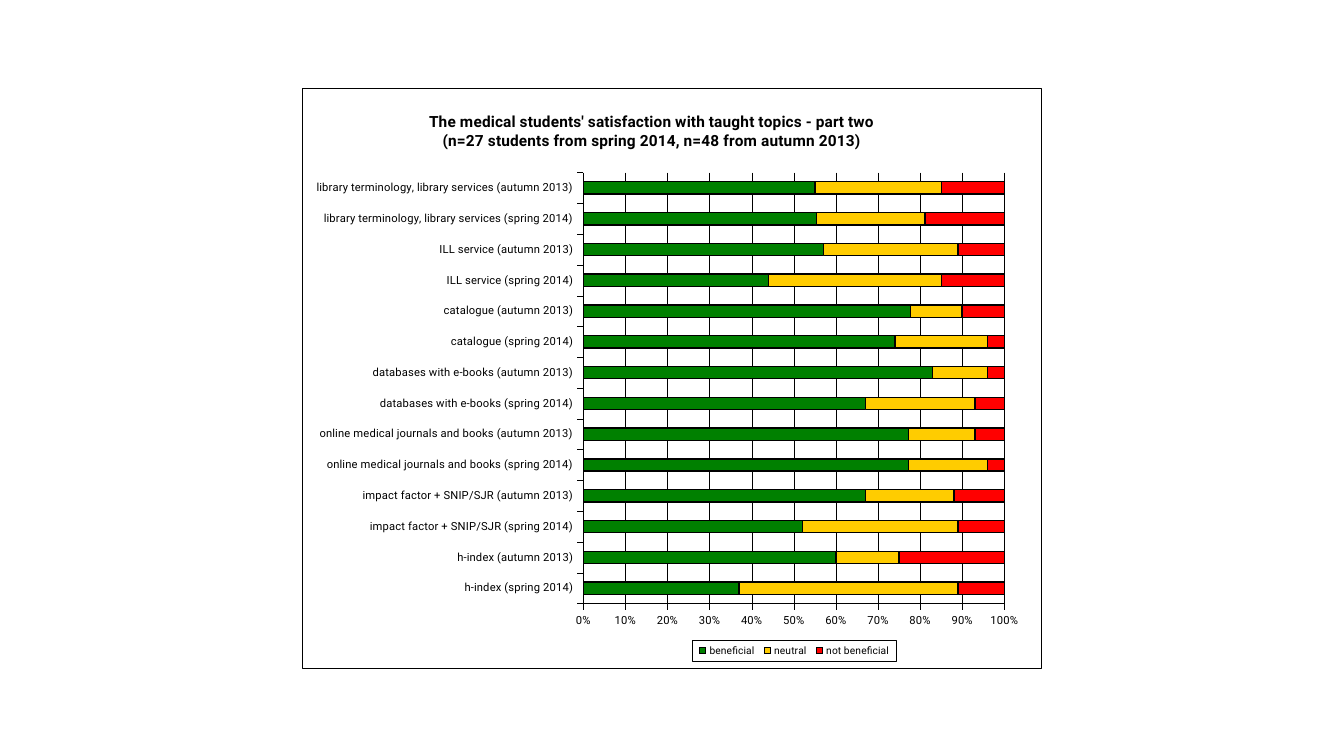
import lxml.etree
import pptx
import pptx.chart.data
import pptx.dml.color
import pptx.enum.chart
import pptx.oxml
import pptx.oxml.ns
import pptx.util

BLACK = pptx.dml.color.RGBColor(0x00, 0x00, 0x00)
WHITE = pptx.dml.color.RGBColor(0xFF, 0xFF, 0xFF)
GREEN = pptx.dml.color.RGBColor(0x00, 0x80, 0x00)
YELLOW = pptx.dml.color.RGBColor(0xFF, 0xCC, 0x00)
RED = pptx.dml.color.RGBColor(0xFF, 0x00, 0x00)

SLIDE_WIDTH = pptx.util.Inches(13.33)
SLIDE_HEIGHT = pptx.util.Inches(7.5)
COLUMNS = 40
ROWS = 100
HAIRLINE = pptx.util.Pt(0.25)

TITLE = (
    "The medical students' satisfaction with taught topics - part two\n"
    "(n=27 students from spring 2014, n=48 from autumn 2013)"
)
TOPICS = [
    "h-index",
    "impact factor + SNIP/SJR",
    "online medical journals and books",
    "databases with e-books",
    "catalogue",
    "ILL service",
    "library terminology, library services",
]
TERMS = ["spring 2014", "autumn 2013"]
RATINGS = [
    ("beneficial", GREEN, [37, 60, 52, 67, 78, 78, 67, 83, 74, 77, 44, 57, 56, 55]),
    ("neutral", YELLOW, [52, 15, 37, 21, 19, 16, 26, 13, 22, 12, 41, 32, 26, 30]),
    ("not beneficial", RED, [11, 25, 11, 12, 4, 7, 7, 4, 4, 10, 15, 11, 19, 15]),
]

TITLE_FONT = {"name": "Roboto", "size": pptx.util.Pt(11), "bold": True}
AXIS_FONT = {"name": "Roboto", "size": pptx.util.Pt(8), "bold": False}
LEGEND_FONT = {"name": "Roboto", "size": pptx.util.Pt(7.3), "bold": False}
CHART_FONT = {"name": "Arial", "size": pptx.util.Pt(8.5)}
AXIS_FORMAT = {
    "major_tick_mark": pptx.enum.chart.XL_TICK_MARK.OUTSIDE,
    "minor_tick_mark": pptx.enum.chart.XL_TICK_MARK.NONE,
}
VALUE_FORMAT = {
    "minimum_scale": 0,
    "maximum_scale": 1,
    "major_unit": 0.1,
    "has_major_gridlines": True,
}
LABEL_FORMAT = {"number_format": "0%", "number_format_is_linked": False}
PLOT_FORMAT = {"gap_width": 150, "overlap": 100, "vary_by_categories": False}
LEGEND_FORMAT = {
    "position": pptx.enum.chart.XL_LEGEND_POSITION.BOTTOM,
    "include_in_layout": False,
}


def apply_format(target, values):
    for name, value in values.items():
        setattr(target, name, value)


def style_font(font, values):
    apply_format(font, values)
    font.color.rgb = BLACK


def style_line(line, width):
    line.color.rgb = BLACK
    line.width = width


def place(element, index, shares):
    for old in element.findall(pptx.oxml.ns.qn("c:layout")):
        element.remove(old)
    layout = lxml.etree.Element(pptx.oxml.ns.qn("c:layout"))
    manual = lxml.etree.SubElement(layout, pptx.oxml.ns.qn("c:manualLayout"))
    for name, value in shares.items():
        lxml.etree.SubElement(manual, pptx.oxml.ns.qn(f"c:{name}")).set("val", str(value))
    element.insert(index, layout)


def add_frame(element):
    frame = pptx.oxml.parse_xml(
        f'<c:spPr {pptx.oxml.ns.nsdecls("c", "a")}>'
        f'<a:solidFill><a:srgbClr val="{WHITE}"/></a:solidFill>'
        f'<a:ln w="{HAIRLINE}"><a:solidFill><a:srgbClr val="{BLACK}"/></a:solidFill></a:ln>'
        "</c:spPr>"
    )
    element.find(pptx.oxml.ns.qn("c:txPr")).addprevious(frame)


def add_bar_chart(page, column, row, columns, rows):
    data = pptx.chart.data.CategoryChartData(number_format="0")
    data.categories = [f"{topic} ({term})" for topic in TOPICS for term in TERMS]
    for name, color, values in RATINGS:
        data.add_series(name, values)
    chart = page.shapes.add_chart(
        pptx.enum.chart.XL_CHART_TYPE.BAR_STACKED_100,
        int(SLIDE_WIDTH * column / COLUMNS),
        int(SLIDE_HEIGHT * row / ROWS),
        int(SLIDE_WIDTH * columns / COLUMNS),
        int(SLIDE_HEIGHT * rows / ROWS),
        data,
    ).chart
    style_font(chart.font, CHART_FONT)
    add_frame(chart._chartSpace)
    return chart


def style_bars(chart):
    plot = chart.plots[0]
    apply_format(plot, PLOT_FORMAT)
    for series, (name, color, values) in zip(plot.series, RATINGS):
        series.format.fill.solid()
        series.format.fill.fore_color.rgb = color
        style_line(series.format.line, pptx.util.Pt(1))
    place(chart._chartSpace.chart.plotArea, 0, {
        "layoutTarget": "inner", "xMode": "edge", "yMode": "edge",
        "x": 0.38, "y": 0.146, "w": 0.57, "h": 0.743,
    })


def style_axes(chart):
    for axis in (chart.category_axis, chart.value_axis):
        apply_format(axis, AXIS_FORMAT)
        style_font(axis.tick_labels.font, AXIS_FONT)
        style_line(axis.format.line, HAIRLINE)
    apply_format(chart.value_axis, VALUE_FORMAT)
    apply_format(chart.value_axis.tick_labels, LABEL_FORMAT)
    style_line(chart.value_axis.major_gridlines.format.line, HAIRLINE)


def add_title(chart):
    chart.has_title = True
    frame = chart.chart_title.text_frame
    frame.text = TITLE
    for para in frame.paragraphs:
        for span in para.runs:
            style_font(span.font, TITLE_FONT)
    title = chart._chartSpace.chart.find(pptx.oxml.ns.qn("c:title"))
    place(title, 1, {"xMode": "edge", "yMode": "edge", "x": 0.167, "y": 0.035})


def add_legend(chart):
    chart.has_legend = True
    apply_format(chart.legend, LEGEND_FORMAT)
    style_font(chart.legend.font, LEGEND_FONT)
    legend = chart._chartSpace.chart.find(pptx.oxml.ns.qn("c:legend"))
    place(legend, 1, {
        "xMode": "edge", "yMode": "edge",
        "x": 0.528, "y": 0.952, "w": 0.275, "h": 0.036,
    })
    add_frame(legend)


def main():
    deck = pptx.Presentation()
    apply_format(deck, {"slide_width": SLIDE_WIDTH, "slide_height": SLIDE_HEIGHT})
    page = deck.slides.add_slide(deck.slide_layouts[6])
    chart = add_bar_chart(page, column=9, row=11.6, columns=22, rows=76.8)
    style_bars(chart)
    style_axes(chart)
    add_title(chart)
    add_legend(chart)
    deck.save("out.pptx")


if __name__ == "__main__":
    main()
